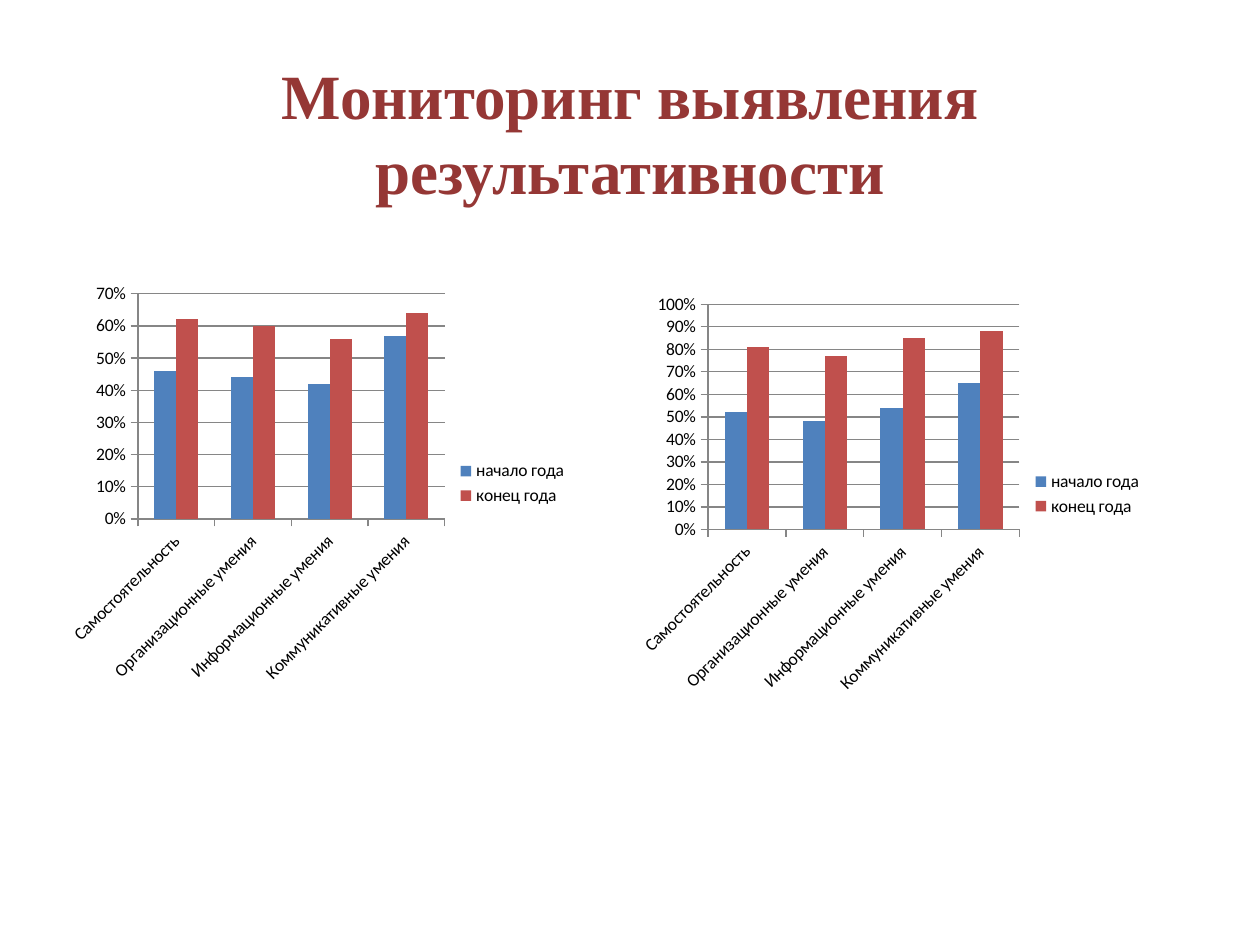
from pptx import Presentation
from pptx import util as u
from pptx.chart.data import CategoryChartData
from pptx.dml.color import RGBColor
from pptx.enum import chart as ch, text

SKILLS = ["Самостоятельность", "Организационные умения",
          "Информационные умения", "Коммуникативные умения"]
TERMS = {"начало года": "4F81BD", "конец года": "C0504D"}


def color(code):
    return RGBColor.from_string(code)


def apply(item, values):
    for name, value in values.items():
        setattr(item, name, value)


class Deck:
    head = dict(name="Times New Roman", size=u.Pt(36), bold=True)
    label = dict(name="Calibri", size=u.Pt(10))
    line = "868686"

    def __init__(self, show):
        self.slide = show.slides.add_slide(show.slide_layouts[5])

    def title(self, words, left, top, width, height):
        box = self.slide.shapes.title
        apply(box, dict(left=u.Pt(left), top=u.Pt(top),
                        width=u.Pt(width), height=u.Pt(height)))
        frame = box.text_frame
        apply(frame, dict(text=words, word_wrap=True,
                          auto_size=text.MSO_AUTO_SIZE.NONE,
                          vertical_anchor=text.MSO_ANCHOR.MIDDLE))
        para = frame.paragraphs[0]
        para.alignment = text.PP_ALIGN.CENTER
        font = para.runs[0].font
        apply(font, self.head)
        font.color.rgb = color("953735")

    def columns(self, rows, top_value, *place):
        data = CategoryChartData(number_format="0%")
        data.categories = SKILLS
        for term, row in zip(TERMS, rows):
            data.add_series(term, row)
        chart = self.slide.shapes.add_chart(
            ch.XL_CHART_TYPE.COLUMN_CLUSTERED, *map(u.Pt, place), data).chart
        apply(chart, dict(has_title=False, has_legend=True))
        apply(chart.font, self.label)
        chart.font.color.rgb = color("000000")
        apply(chart.legend, dict(position=ch.XL_LEGEND_POSITION.RIGHT,
                                 include_in_layout=False))

        # Columns
        plot = chart.plots[0]
        apply(plot, dict(gap_width=150, overlap=0, vary_by_categories=False))
        for bars, code in zip(plot.series, TERMS.values()):
            bars.format.fill.solid()
            bars.format.fill.fore_color.rgb = color(code)

        # Axes and gridlines
        scale = chart.value_axis
        apply(scale, dict(minimum_scale=0, maximum_scale=top_value,
                          major_unit=0.1, has_major_gridlines=True))
        apply(scale.tick_labels, dict(number_format="0%",
                                      number_format_is_linked=False))
        for axis in (scale, chart.category_axis):
            axis.major_tick_mark = ch.XL_TICK_MARK.OUTSIDE
        for part in (scale, chart.category_axis, scale.major_gridlines):
            part.format.line.width = u.Pt(0.75)
            part.format.line.color.rgb = color(self.line)


def main():
    show = Presentation()
    apply(show, dict(slide_width=u.Pt(720), slide_height=u.Pt(540)))
    deck = Deck(show)
    deck.title("Мониторинг выявления результативности", 56, 28, 608, 94.5)

    # Two rounds of results, side by side
    deck.columns([(0.46, 0.44, 0.42, 0.57), (0.62, 0.6, 0.56, 0.64)],
                 0.7, 34, 157.5, 297.5, 237.5)
    deck.columns([(0.52, 0.48, 0.54, 0.65), (0.81, 0.77, 0.85, 0.88)],
                 1, 360, 163.5, 300, 237.5)
    show.save("out.pptx")


if __name__ == "__main__":
    main()
